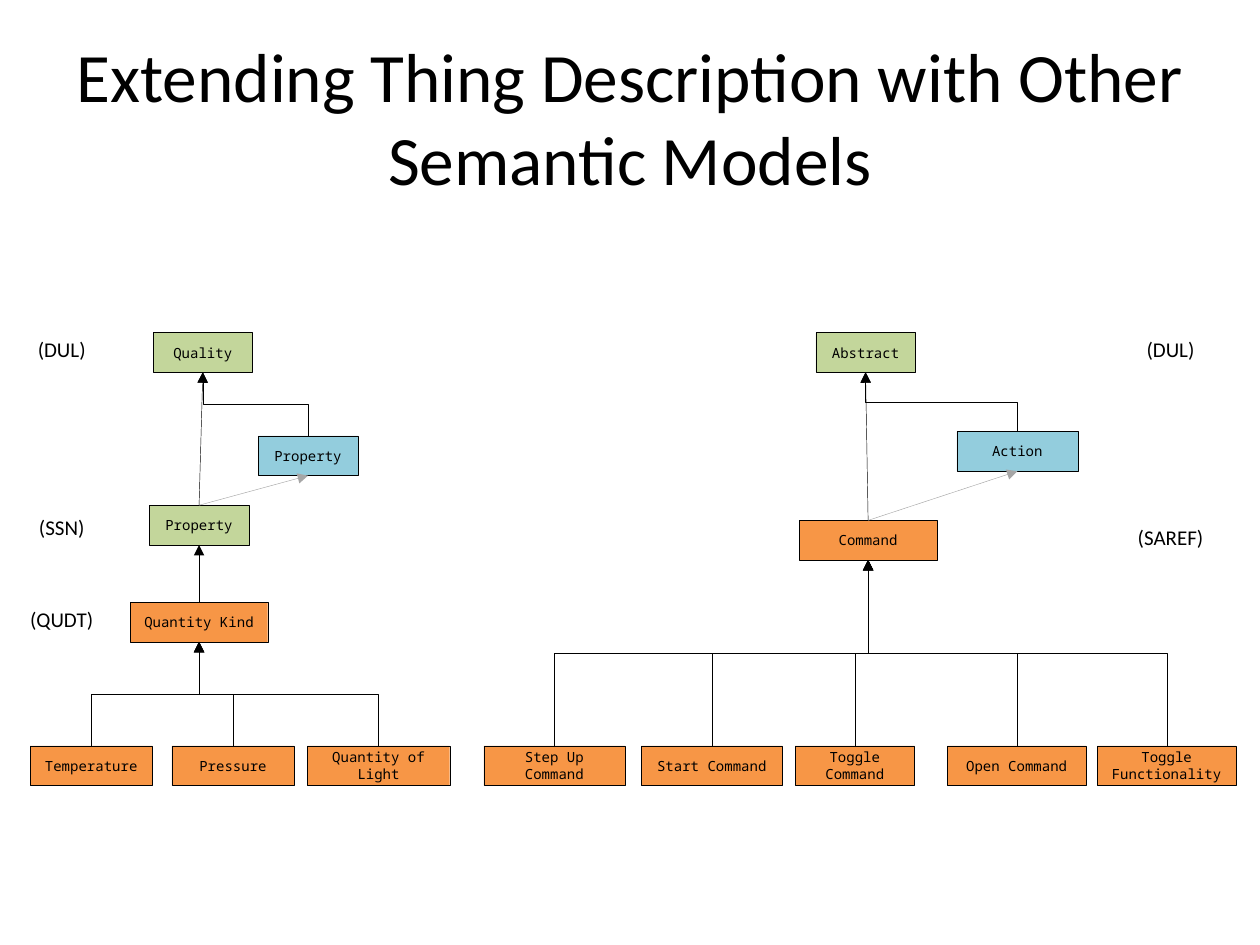
from dataclasses import dataclass

import pptx
import pptx.dml.color
import pptx.enum.shapes
import pptx.enum.text
import pptx.oxml.ns
import pptx.util
from lxml import etree

COLUMNS, ROWS = 100, 75
CELL = pptx.util.Inches(0.1)
NODE_ROWS = 3.15
TOP, BOTTOM = 0, 2


@dataclass(frozen=True)
class Theme:
    """Colours, fonts and sizes of the slide."""
    ink: str = "000000"
    pale: str = "A6A6A6"
    upper: str = "C3D69B"
    thing: str = "93CDDD"
    domain: str = "F79646"
    text_font: str = "Calibri"
    node_font: str = "Noto Sans Mono"
    title_size: float = 39.6
    label_size: float = 12
    node_size: float = 8
    line_width: float = 0.25


@dataclass(frozen=True)
class Box:
    """A region measured in grid columns and rows."""
    left: float
    top: float
    width: float
    height: float

    def inner(self, column, row, width, height):
        """Return a box placed relative to this one."""
        return Box(self.left + column, self.top + row, width, height)

    def lengths(self):
        """Return left, top, width and height as slide lengths."""
        return [round(value * CELL) for value in (self.left, self.top, self.width, self.height)]


THEME = Theme()


def colour(code):
    """Turn a hex code into a colour."""
    return pptx.dml.color.RGBColor.from_string(code)


def write(frame, text, font, size, spacing=None):
    """Set centred text in a frame and format it."""
    frame.text = text
    frame.word_wrap = True
    para = frame.paragraphs[0]
    para.alignment = pptx.enum.text.PP_ALIGN.CENTER
    para.line_spacing = spacing
    for span in para.runs:
        span.font.name = font
        span.font.size = pptx.util.Pt(size)
        span.font.color.rgb = colour(THEME.ink)


def place_title(page, box, text):
    """Move and format the title placeholder."""
    title = page.shapes.title
    title.left, title.top, title.width, title.height = box.lengths()
    write(title.text_frame, text, THEME.text_font, THEME.title_size)
    title.text_frame.vertical_anchor = pptx.enum.text.MSO_ANCHOR.MIDDLE


def place_node(page, box, text, fill):
    """Draw one class as a filled rectangle."""
    node = page.shapes.add_shape(pptx.enum.shapes.MSO_SHAPE.RECTANGLE, *box.lengths())
    node.shadow.inherit = False
    node.fill.solid()
    node.fill.fore_color.rgb = colour(fill)
    node.line.color.rgb = colour(THEME.ink)
    node.line.width = pptx.util.Pt(THEME.line_width)
    frame = node.text_frame
    frame.margin_left = frame.margin_right = pptx.util.Inches(0.08)
    frame.vertical_anchor = pptx.enum.text.MSO_ANCHOR.MIDDLE
    write(frame, text, THEME.node_font, THEME.node_size)
    return node


def style_link(link, ink):
    """Give a connector its colour, width and arrowhead."""
    link.line.color.rgb = colour(ink)
    link.line.width = pptx.util.Pt(THEME.line_width)
    name = pptx.oxml.ns.qn
    etree.SubElement(link.line._get_or_add_ln(), name("a:tailEnd"), type="triangle")
    etree.SubElement(link._element.spPr, name("a:effectLst"))


def link_straight(page, child, parent, ink):
    """Join the top of a child to the bottom of its parent."""
    link = page.shapes.add_connector(pptx.enum.shapes.MSO_CONNECTOR.STRAIGHT, 0, 0, 0, 0)
    link.begin_connect(child, TOP)
    link.end_connect(parent, BOTTOM)
    style_link(link, ink)


def link_elbow(page, child, parent):
    """Draw a quarter-turned elbow that rises from a child to its parent."""
    start_x, end_x = (node.left + node.width // 2 for node in (child, parent))
    start_y, end_y = child.top, parent.top + parent.height
    middle_x, middle_y = (start_x + end_x) // 2, (start_y + end_y) // 2
    reach, shift = (start_y - end_y) // 2, (start_x - end_x) // 2
    link = page.shapes.add_connector(
        pptx.enum.shapes.MSO_CONNECTOR.ELBOW,
        middle_x - reach, middle_y + shift, middle_x + reach, middle_y - shift)
    link._element.spPr.find(pptx.oxml.ns.qn("a:xfrm")).set("rot", str(270 * 60000))
    style_link(link, THEME.ink)


def place_tree(page, box, root, thing, chain, leaves):
    """Draw a class tree: root, described thing, chain of classes and leaves."""
    def add(text, fill, column, row, width):
        return place_node(page, box.inner(column, row, width, NODE_ROWS), text, fill)

    root_node = add(*root)
    thing_node = add(*thing)
    chain_nodes = [add(*entry) for entry in chain]
    link_elbow(page, thing_node, root_node)
    link_straight(page, chain_nodes[0], thing_node, THEME.pale)
    for child, parent in zip(chain_nodes, [root_node] + chain_nodes):
        link_straight(page, child, parent, THEME.ink)
    for text, column, width in leaves:
        leaf = add(text, THEME.domain, column, box.height - NODE_ROWS, width)
        link_elbow(page, leaf, chain_nodes[-1])


def place_labels(page, box, labels):
    """Write the source vocabularies down a side column."""
    for text, row in labels:
        label = page.shapes.add_textbox(*box.inner(0, row, box.width, 2.1).lengths())
        frame = label.text_frame
        frame.margin_left = frame.margin_right = frame.margin_top = frame.margin_bottom = 0
        write(frame, text, THEME.text_font, THEME.label_size, 1.1)


def main():
    """Build and save the deck."""
    deck = pptx.Presentation()
    deck.slide_width, deck.slide_height = COLUMNS * CELL, ROWS * CELL
    page = deck.slides.add_slide(deck.slide_layouts[5])
    place_title(page, Box(5, 3, 90, 12.5),
                "Extending Thing Description with Other Semantic Models")
    place_tree(
        page, Box(2.4, 26.4, 33.2, 35.95),
        root=("Quality", THEME.upper, 9.75, 0, 7.9),
        thing=("Property", THEME.thing, 18.1, 8.2, 7.9),
        chain=[("Property", THEME.upper, 9.45, 13.7, 7.9),
               ("Quantity Kind", THEME.domain, 7.95, 21.4, 10.9)],
        leaves=[("Temperature", 0, 9.7), ("Pressure", 11.25, 9.7),
                ("Quantity of Light", 22, 11.3)])
    place_tree(
        page, Box(38.4, 26.4, 59.7, 35.95),
        root=("Abstract", THEME.upper, 26.35, 0, 7.9),
        thing=("Action", THEME.thing, 37.55, 7.85, 9.6),
        chain=[("Command", THEME.domain, 25.05, 14.9, 10.9)],
        leaves=[("Step Up Command", 0, 11.2), ("Start Command", 12.5, 11.2),
                ("Toggle Command", 24.7, 9.5), ("Open Command", 36.8, 11),
                ("Toggle Functionality", 48.7, 11)])
    place_labels(page, Box(0, 26.5, 9.8, 23.6),
                 [("(DUL)", 0), ("(SSN)", 14.1), ("(QUDT)", 21.4)])
    place_labels(page, Box(85.8, 26.5, 14.2, 17), [("(DUL)", 0), ("(SAREF)", 14.9)])
    deck.save("out.pptx")


if __name__ == "__main__":
    main()
